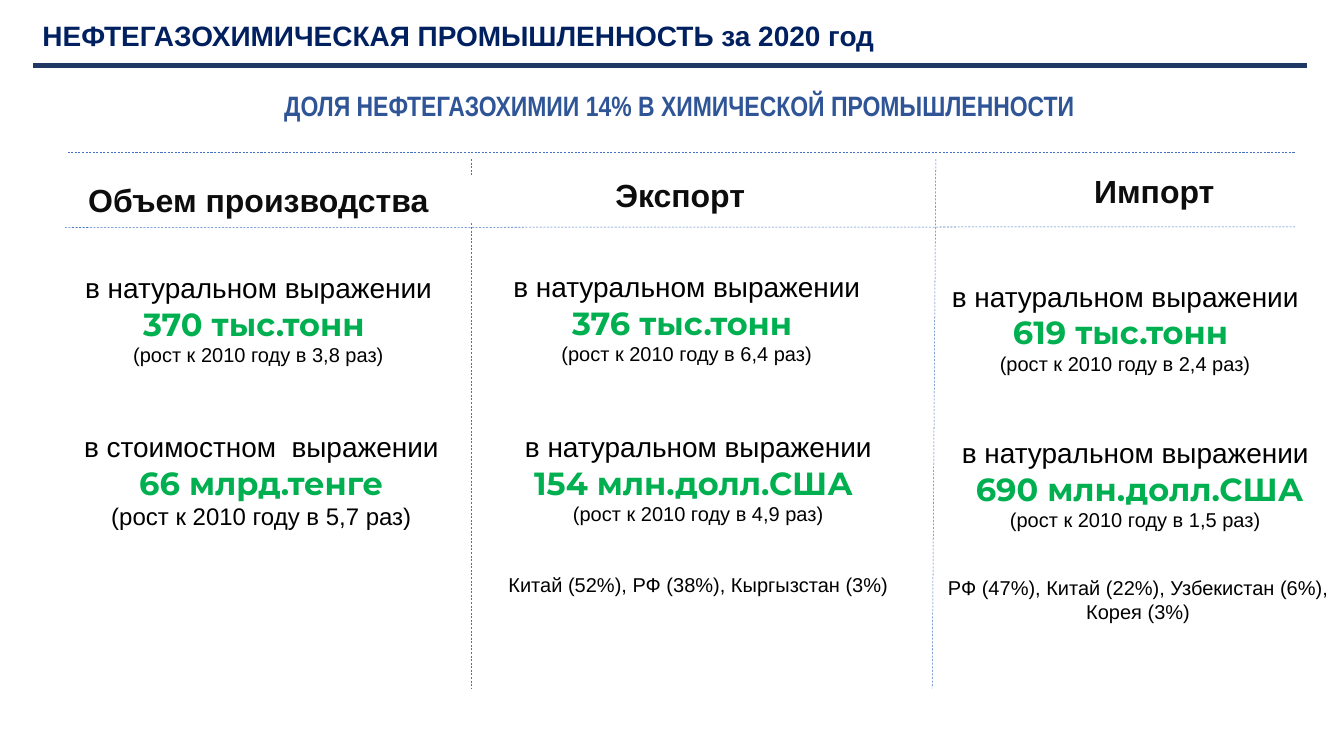
"""Build the slide on the petrochemical industry in 2020."""
from lxml import etree
from pptx import Presentation
from pptx.dml.color import RGBColor
from pptx.enum.dml import MSO_LINE_DASH_STYLE as Dash
from pptx.enum.shapes import MSO_CONNECTOR as Connector, MSO_SHAPE as Shape
from pptx.enum.text import MSO_ANCHOR as Anchor, MSO_AUTO_SIZE as AutoSize, PP_ALIGN as Align
from pptx.oxml.ns import qn
from pptx.util import Inches, Pt

NAVY = RGBColor(0x00, 0x20, 0x60)
RULE_BLUE = RGBColor(0x20, 0x38, 0x64)
GRID_BLUE = RGBColor(0x44, 0x72, 0xC4)
SUBTITLE_BLUE = RGBColor(0x2F, 0x55, 0x97)
HEADING_GREY = RGBColor(0x0D, 0x0D, 0x0D)
GREEN = RGBColor(0x00, 0xB0, 0x50)
BLACK = RGBColor(0x00, 0x00, 0x00)
WHITE = RGBColor(0xFF, 0xFF, 0xFF)

BLOCK_WIDTH = 7.26
NATURAL = "в натуральном выражении"
COST = "в стоимостном  выражении"

GRID_LINES = [
    (6.54, 2.21, 6.54, 9.56),
    (13, 2.21, 12.95, 9.56),
    (0.9, 3.16, 17.99, 3.15),
    (0.94, 2.11, 17.99, 2.11),
]
HEADINGS = [
    ("Объем производства", 0.22, 2.46, 6.74),
    ("Экспорт", 6.9, 2.38, 5.1),
    ("Импорт", 13.89, 2.33, 4.29),
]
FIGURES = [
    (-0.04, 3.71, NATURAL, "370 тыс.тонн ", "3,8", 20),
    (5.91, 3.7, NATURAL, "376 тыс.тонн ", "6,4", 20),
    (12, 3.83, NATURAL, "619 тыс.тонн ", "2,4", 20),
    (0, 5.92, COST, "66 млрд.тенге", "5,7", 24),
    (6.07, 5.92, NATURAL, "154 млн.долл.США ", "4,9", 20),
    (12.14, 6, NATURAL, " 690 млн.долл.США", "1,5", 20),
]
COUNTRIES = [
    (6.07, 7.9, ["Китай (52%), РФ (38%), Кыргызстан (3%)"]),
    (12.18, 7.95, ["РФ (47%), Китай (22%), Узбекистан (6%),", "Корея (3%)"]),
]


def write(frame, text, size=20, color=BLACK, font="Arial", bold=False, align=Align.CENTER):
    """Write a formatted paragraph, using the first one while it is empty."""
    para = frame.paragraphs[0] if not frame.text else frame.add_paragraph()
    para.alignment = align
    span = para.add_run()
    span.text = text
    span.font.size = Pt(size)
    span.font.name = font
    span.font.bold = bold
    span.font.color.rgb = color


def add_line(page, ends, color, width, dash=None):
    """Draw a straight line without a shadow."""
    line = page.shapes.add_connector(Connector.STRAIGHT, *map(Inches, ends))
    line.line.color.rgb = color
    line.line.width = Pt(width)
    if dash:
        line.line.dash_style = dash
    etree.SubElement(line._element.spPr, qn("a:effectLst"))


def add_text_box(page, left, top, width, height, wrap=True):
    """Add a text box that grows with its text and return its frame."""
    box = page.shapes.add_textbox(*map(Inches, (left, top, width, height)))
    frame = box.text_frame
    frame.word_wrap = wrap
    frame.auto_size = AutoSize.SHAPE_TO_FIT_TEXT
    return frame


def add_title(page, text):
    """Place and fill the title placeholder."""
    title = page.shapes.title
    title.left, title.top, title.width, title.height = map(Inches, (0.49, 0.14, 17.69, 0.71))
    frame = title.text_frame
    frame.auto_size = AutoSize.NONE
    frame.vertical_anchor = Anchor.MIDDLE
    write(frame, text, size=28, color=NAVY, bold=True, align=Align.JUSTIFY)


def add_heading(page, text, left, top, width):
    """Add a white column heading that covers the grid behind it."""
    box = page.shapes.add_shape(Shape.RECTANGLE, *map(Inches, (left, top, width, 0.64)))
    box.shadow.inherit = False
    box.fill.solid()
    box.fill.fore_color.rgb = WHITE
    box.line.fill.background()
    write(box.text_frame, text, size=32, color=HEADING_GREY, bold=True)


def add_figure(page, left, top, label, value, growth, note_size):
    """Add a label, a large green value and its growth since 2010."""
    frame = add_text_box(page, left, top, BLOCK_WIDTH, 1.45)
    write(frame, label, size=28)
    write(frame, value, size=32, color=GREEN, font="Montserrat", bold=True)
    write(frame, f"(рост к 2010 году в {growth} раз)", size=note_size)


def add_countries(page, left, top, lines):
    """Add the list of partner countries."""
    frame = add_text_box(page, left, top, BLOCK_WIDTH, 0.1 + 0.34 * len(lines))
    for text in lines:
        write(frame, text)


def main():
    """Build and save the deck."""
    deck = Presentation()
    deck.slide_width, deck.slide_height = Inches(18.67), Inches(10.5)
    page = deck.slides.add_slide(deck.slide_layouts[5])

    add_title(page, "НЕФТЕГАЗОХИМИЧЕСКАЯ ПРОМЫШЛЕННОСТЬ за 2020 год")
    add_line(page, (0.46, 0.91, 18.16, 0.91), RULE_BLUE, 4.5)
    subtitle = add_text_box(page, 3.85, 1.18, 11.39, 0.57, wrap=False)
    write(subtitle, "ДОЛЯ НЕФТЕГАЗОХИМИИ 14% В ХИМИЧЕСКОЙ ПРОМЫШЛЕННОСТИ",
          size=28, color=SUBTITLE_BLUE, font="Arial Narrow", bold=True, align=Align.LEFT)

    for ends in GRID_LINES:
        add_line(page, ends, GRID_BLUE, 0.5, Dash.DASH)
    for heading in HEADINGS:
        add_heading(page, *heading)
    for figure in FIGURES:
        add_figure(page, *figure)
    for countries in COUNTRIES:
        add_countries(page, *countries)

    deck.save("out.pptx")


if __name__ == "__main__":
    main()
